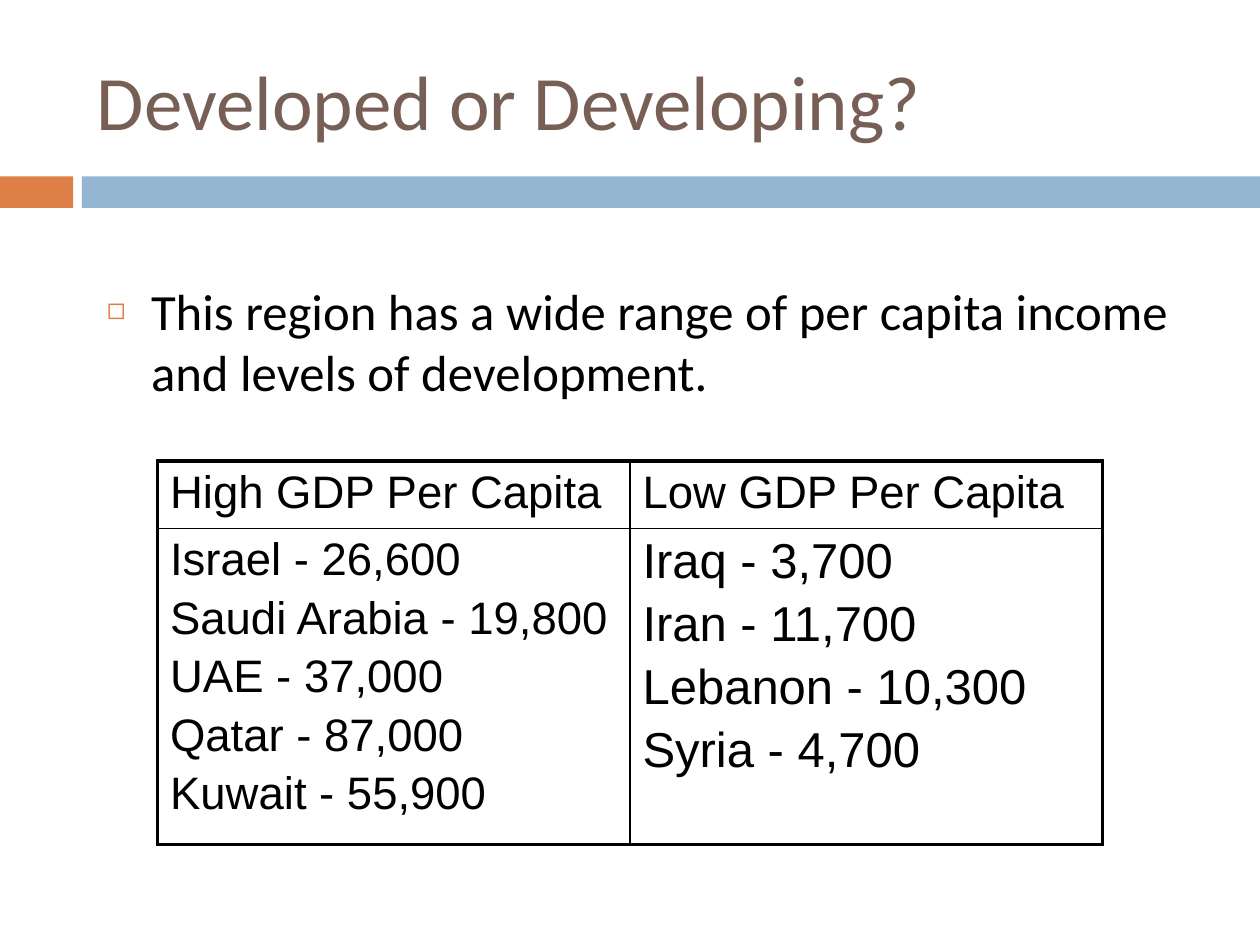
"""Build a slide on per capita income, with a table of high and low GDP."""
from lxml.etree import SubElement as Sub
from pptx import Presentation
from pptx.dml.color import RGBColor as Color
from pptx.enum.shapes import MSO_SHAPE as Shape
from pptx.enum.text import MSO_ANCHOR as Anchor
from pptx.oxml import parse_xml
from pptx.oxml.ns import nsdecls, qn
from pptx.util import Inches, Pt

TITLE = "Developed or Developing?"
BODY = "This region has a wide range of per capita income and levels of development."
BARS = [(0, 0.58, "DD8047"), (0.65, 9.35, "94B6D2")]
HEADS = ["High GDP Per Capita", "Low GDP Per Capita"]
LISTS = [
    ["Israel - 26,600", "Saudi Arabia - 19,800", "UAE - 37,000",
     "Qatar - 87,000", "Kuwait - 55,900"],
    ["Iraq - 3,700", "Iran - 11,700", "Lebanon - 10,300", "Syria - 4,700"],
]
GRID = [[([head], 26) for head in HEADS], list(zip(LISTS, (26, 28)))]
ROWS = [0.5, 2.41]
COLS = [3.75, 3.75]
BLACK = "000000"


def tint(hue):
    return Color.from_string(hue)


def write(para, text, size, face, hue):
    run = para.add_run()
    run.text = text
    font = run.font
    font.size, font.name = Pt(size), face
    font.color.rgb = tint(hue)


def add_bar(slide, left, width, hue):
    bar = slide.shapes.add_shape(
        Shape.RECTANGLE, Inches(left), Inches(1.4), Inches(width), Inches(0.25))
    bar.shadow.inherit = False
    bar.fill.solid()
    bar.fill.fore_color.rgb = tint(hue)
    bar.line.fill.background()


def add_text(slide, area, text, size, hue, anchor):
    frame = slide.shapes.add_textbox(*map(Inches, area)).text_frame
    frame.word_wrap = True
    frame.vertical_anchor = anchor
    para = frame.paragraphs[0]
    write(para, text, size, "Calibri", hue)
    return para


def add_bullet(para, hue):
    props = para._p.get_or_add_pPr()
    props.set("marL", str(Inches(0.35)))
    props.set("indent", str(-Inches(0.35)))
    Sub(Sub(props, qn("a:buClr")), qn("a:srgbClr"), val=hue)
    Sub(props, qn("a:buSzPct"), val="60000")
    Sub(props, qn("a:buFont"), typeface="Calibri")
    Sub(props, qn("a:buChar"), char="◻")


def set_edges(cell, row, col):
    outer = {"L": col == 0, "R": col == len(COLS) - 1,
             "T": row == 0, "B": row == len(ROWS) - 1}
    props = cell._tc.get_or_add_tcPr()
    for spot, (side, edge) in enumerate(outer.items()):
        width = Pt(2.25 if edge else 1)
        props.insert(spot, parse_xml(
            f'<a:ln{side} {nsdecls("a")} w="{width}"><a:solidFill>'
            f'<a:srgbClr val="{BLACK}"/></a:solidFill></a:ln{side}>'))


def fill_cell(cell, lines, size):
    cell.fill.background()
    frame = cell.text_frame
    for spot, line in enumerate(lines):
        para = frame.add_paragraph() if spot else frame.paragraphs[0]
        if spot:
            para.space_before = Pt(round(size * 0.17, 1))
        write(para, line, size, "Arial", BLACK)


def add_grid(slide):
    area = (1.25, 3.66, sum(COLS), sum(ROWS))
    table = slide.shapes.add_table(
        len(ROWS), len(COLS), *map(Inches, area)).table
    table.first_row = table.horz_banding = False
    for col, width in zip(table.columns, COLS):
        col.width = Inches(width)
    for row, height in zip(table.rows, ROWS):
        row.height = Inches(height)
    for row, cells in enumerate(GRID):
        for col, (lines, size) in enumerate(cells):
            cell = table.cell(row, col)
            fill_cell(cell, lines, size)
            set_edges(cell, row, col)


def main():
    deck = Presentation()
    deck.slide_width, deck.slide_height = Inches(10), Inches(7.5)
    slide = deck.slides.add_slide(deck.slide_layouts[6])
    for bar in BARS:
        add_bar(slide, *bar)
    add_text(slide, (0.67, 0.25, 8.92, 1.08), TITLE, 44, "775F55", Anchor.MIDDLE)
    para = add_text(slide, (0.75, 2.17, 8.75, 1.25), BODY, 29, BLACK, Anchor.TOP)
    add_bullet(para, "DD8047")
    add_grid(slide)
    deck.save("out.pptx")


if __name__ == "__main__":
    main()
